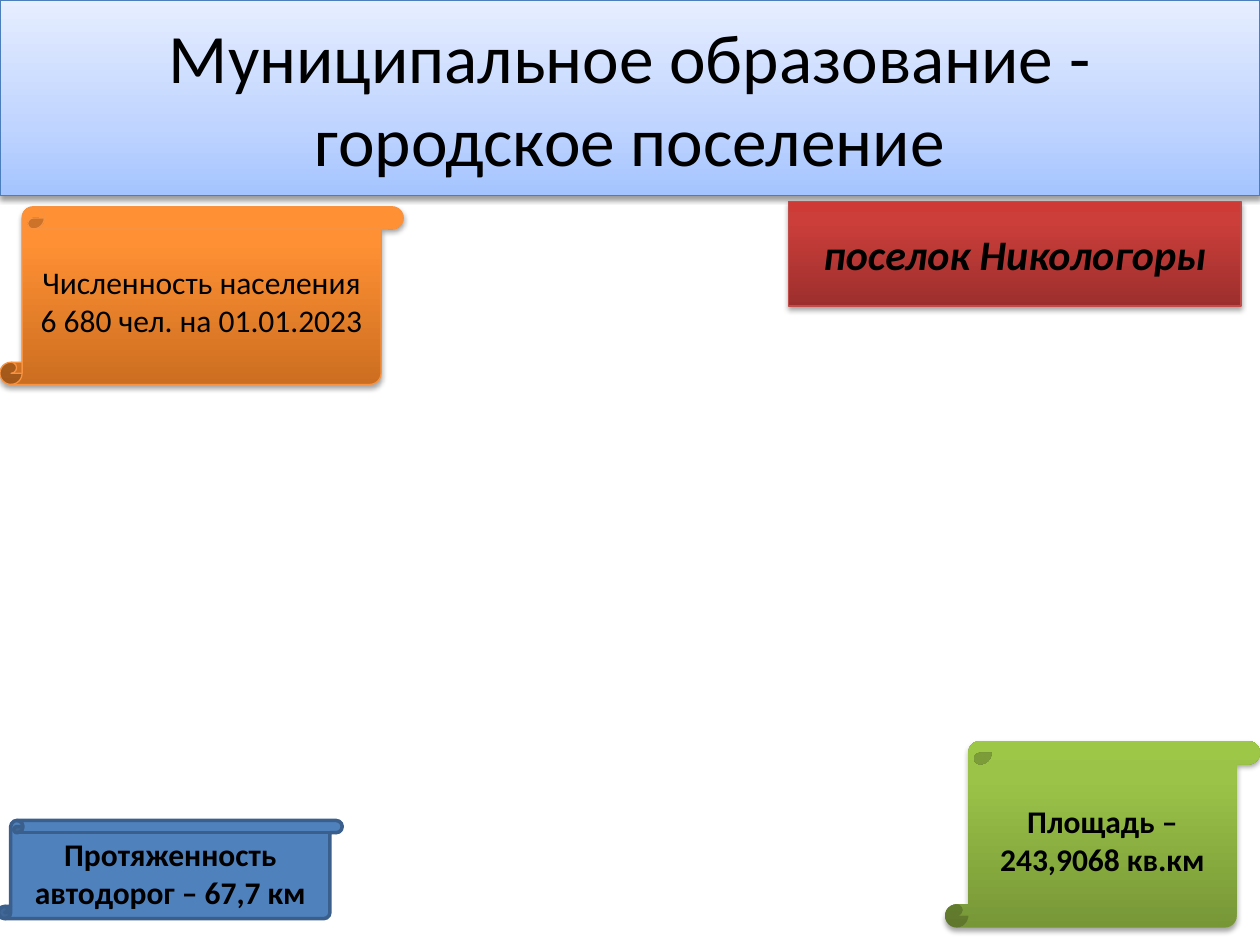
from lxml import etree
from pptx import Presentation
from pptx import util as u
from pptx.dml.color import RGBColor
from pptx.enum import shapes, text
from pptx.oxml.ns import qn

BLACK = RGBColor(0x00, 0x00, 0x00)
BLUE = RGBColor(0x4F, 0x81, 0xBD)
BLUE_LINE = RGBColor(0x3A, 0x5F, 0x8C)
TITLE_LINE = RGBColor(0x4B, 0x7E, 0xBC)
ORANGE_LINE = RGBColor(0xF6, 0x92, 0x40)
RED_LINE = RGBColor(0xBF, 0x4C, 0x48)
SKY = [(0, RGBColor(0xA4, 0xC4, 0xFF)), (35, RGBColor(0xBF, 0xD4, 0xFF)), (100, RGBColor(0xE6, 0xEE, 0xFF))]
ORANGE = [(0, RGBColor(0xCC, 0x6E, 0x20)), (80, RGBColor(0xFF, 0x90, 0x34)), (100, RGBColor(0xFF, 0x91, 0x36))]
GREEN = [(0, RGBColor(0x77, 0x97, 0x37)), (80, RGBColor(0x9B, 0xC3, 0x48)), (100, RGBColor(0x9D, 0xC7, 0x46))]
RED = [(0, RGBColor(0x9C, 0x2F, 0x2D)), (80, RGBColor(0xCB, 0x3E, 0x3A)), (100, RGBColor(0xCE, 0x3B, 0x37))]
RECT = shapes.MSO_SHAPE.RECTANGLE
SCROLL = shapes.MSO_SHAPE.VERTICAL_SCROLL


def set_gradient(sp, stops):
    """Fill the shape with stops running from bottom to top."""
    sp.fill.gradient()
    sp.fill.gradient_angle = 90
    gs_list = sp._element.spPr.find(".//" + qn("a:gsLst"))
    for gs in list(gs_list):
        gs_list.remove(gs)
    for pos, color in stops:
        gs = etree.SubElement(gs_list, qn("a:gs"), pos=str(pos * 1000))
        etree.SubElement(gs, qn("a:srgbClr"), val=str(color))


def set_shadow(sp, dist, alpha):
    """Cast a soft black shadow downwards."""
    effects = sp._element.spPr.find(qn("a:effectLst"))
    shadow = etree.SubElement(effects, qn("a:outerShdw"), blurRad=str(u.Pt(3.1)),
                              dist=str(u.Pt(dist)), dir="5400000", rotWithShape="0")
    color = etree.SubElement(shadow, qn("a:srgbClr"), val=str(BLACK))
    etree.SubElement(color, qn("a:alpha"), val=str(alpha * 1000))


def write_text(sp, content, size=18, bold=False, italic=False):
    """Write one centred paragraph in the middle of the shape."""
    tf = sp.text_frame
    tf.word_wrap = True
    tf.vertical_anchor = text.MSO_ANCHOR.MIDDLE
    p = tf.paragraphs[0]
    p.alignment = text.PP_ALIGN.CENTER
    r = p.add_run()
    r.text = content
    r.font.name = "Calibri"
    r.font.size = u.Pt(size)
    r.font.bold = bold
    r.font.italic = italic
    r.font.color.rgb = BLACK


def add_panel(s, kind, box, fill, line=None, width=0.75, shadow=(1.8, 35)):
    """Add a shape with a solid or gradient fill."""
    sp = s.shapes.add_shape(kind, *(u.Cm(v) for v in box))
    sp.shadow.inherit = False
    if isinstance(fill, list):
        set_gradient(sp, fill)
    else:
        sp.fill.solid()
        sp.fill.fore_color.rgb = fill
    if line is None:
        sp.line.fill.background()
    else:
        sp.line.color.rgb = line
        sp.line.width = u.Pt(width)
    if shadow:
        set_shadow(sp, *shadow)
    return sp


def main():
    """Build the settlement slide."""
    prs = Presentation()
    prs.slide_width, prs.slide_height = u.Cm(25.4), u.Cm(19.05)
    s = prs.slides.add_slide(prs.slide_layouts[6])

    title = add_panel(s, RECT, (0, 0, 25.4, 3.94), SKY, TITLE_LINE, shadow=(1.6, 38))
    write_text(title, "Муниципальное образование - городское поселение", size=39.6)

    population = add_panel(s, SCROLL, (0, 4.17, 8.13, 3.58), ORANGE, ORANGE_LINE)
    write_text(population, "Численность населения 6 680 чел. на 01.01.2023")

    area = add_panel(s, SCROLL, (19.05, 14.94, 6.35, 3.76), GREEN)
    write_text(area, "Площадь – 243,9068 кв.км", bold=True)

    roads = add_panel(s, SCROLL, (-0.03, 16.54, 6.93, 1.98), BLUE, BLUE_LINE, width=2, shadow=None)
    write_text(roads, "Протяженность автодорог – 67,7 км", bold=True)

    village = add_panel(s, RECT, (15.9, 4.06, 9.12, 2.11), RED, RED_LINE)
    write_text(village, "поселок Никологоры", size=24, bold=True, italic=True)

    prs.save("out.pptx")


if __name__ == "__main__":
    main()
